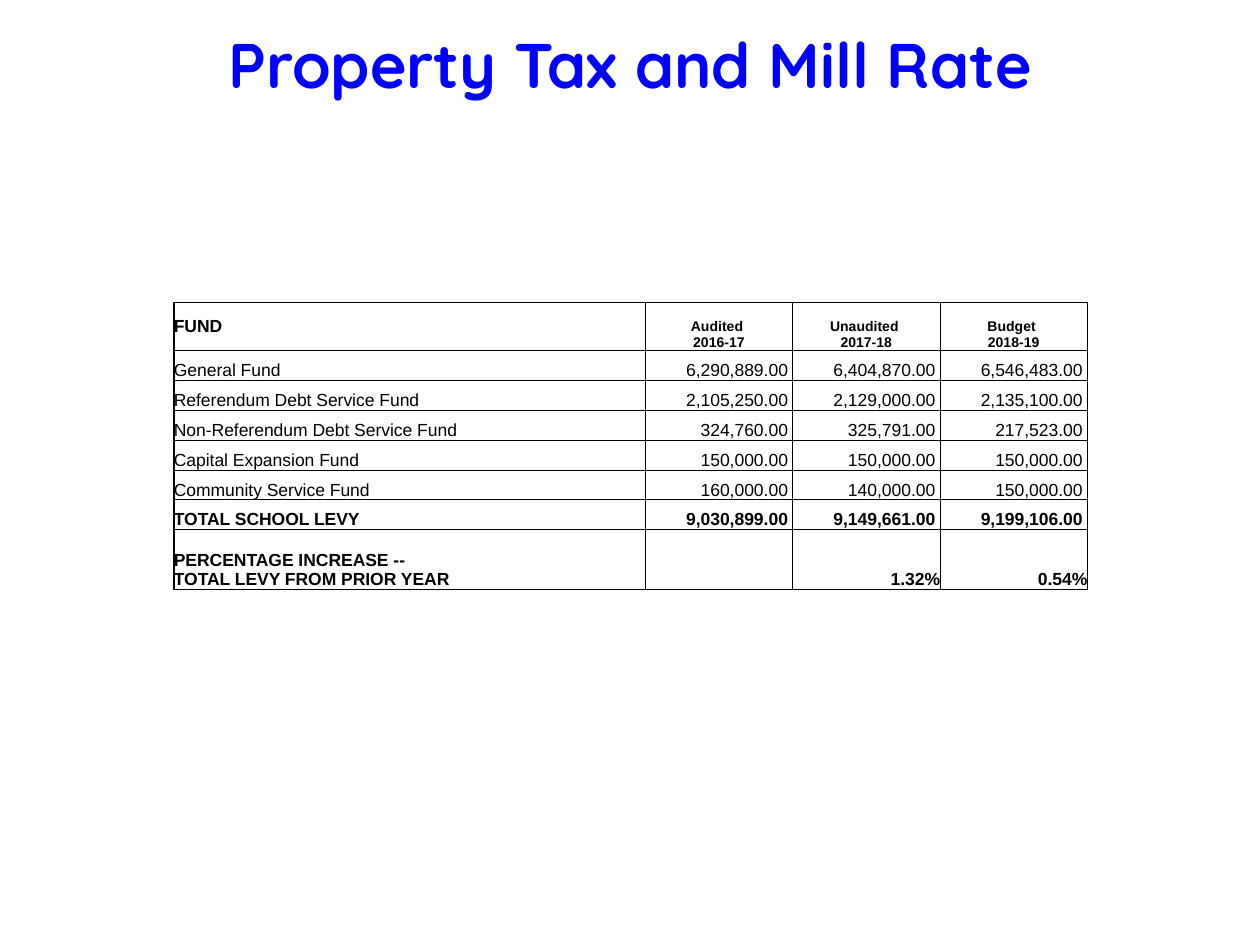
from copy import deepcopy

from lxml import etree
from pptx import Presentation, util as u
from pptx.dml.color import RGBColor
from pptx.enum import text as t
from pptx.oxml import ns

BLUE = RGBColor(0x00, 0x00, 0xFF)
BLACK = RGBColor(0x00, 0x00, 0x00)
SLIDE_WIDTH, SLIDE_HEIGHT = u.Inches(10), u.Inches(7.5)
TABLE_LEFT, TABLE_TOP = u.Inches(1.38), u.Inches(2.4)
TABLE_WIDTH, TABLE_HEIGHT = u.Inches(7.25), u.Inches(2.28)
COLUMN_SHARES = [3.2, 1, 1, 1]
ROW_SHARES = [1.6, 1, 1, 1, 1, 1, 1, 2]
OUTER, INNER = u.Pt(1), u.Pt(0.5)

TITLE = {"name": "Quicksand", "size": u.Pt(36), "bold": True}
BODY = {"name": "Arial", "size": u.Pt(10), "bold": False}
STRONG = {**BODY, "bold": True}
HEADING = {**STRONG, "size": u.Pt(8)}

HEADINGS = ["FUND", "Audited \n2016-17", "Unaudited \n2017-18", "Budget \n2018-19"]
LEVIES = [
    ("General Fund", 6290889, 6404870, 6546483),
    ("Referendum Debt Service Fund", 2105250, 2129000, 2135100),
    ("Non-Referendum Debt Service Fund", 324760, 325791, 217523),
    ("Capital Expansion Fund", 150000, 150000, 150000),
    ("Community Service Fund", 160000, 140000, 150000),
    ("TOTAL SCHOOL LEVY", 9030899, 9149661, 9199106),
]
INCREASES = ["PERCENTAGE INCREASE -- \nTOTAL LEVY FROM PRIOR YEAR", "", "1.32%", "0.54%"]


def write(frame, words, style, color, align):
    para = frame.paragraphs[0]
    para.text = words
    para.alignment = align
    for span in para.runs:
        for name, value in style.items():
            setattr(span.font, name, value)
        span.font.color.rgb = color
    for line_break in para._p.findall(ns.qn("a:br")):
        line_break.append(deepcopy(para.runs[0]._r.rPr))


def add_title(page, words):
    box = page.shapes.add_textbox(
        int(SLIDE_WIDTH * 0.05), u.Inches(0.19), int(SLIDE_WIDTH * 0.9), u.Inches(0.62))
    box.text_frame.word_wrap = True
    box.text_frame.vertical_anchor = t.MSO_ANCHOR.MIDDLE
    write(box.text_frame, words, TITLE, BLUE, t.PP_ALIGN.CENTER)


def set_borders(cell, widths):
    """Draw the four sides; widths follow the schema order L, R, T, B."""
    properties = cell._tc.get_or_add_tcPr()
    for side, width in zip("LRTB", widths):
        line = etree.SubElement(properties, ns.qn(f"a:ln{side}"), w=str(width))
        fill = etree.SubElement(line, ns.qn("a:solidFill"))
        etree.SubElement(fill, ns.qn("a:srgbClr"), val=str(BLACK))


def share_out(parts, attribute, total, shares):
    for part, share in zip(parts, shares):
        setattr(part, attribute, int(total * share / sum(shares)))


def cell_format(row, column, last_row):
    """Return text style, alignment and anchor for a place in the table."""
    if row == 0 and column > 0:
        return HEADING, t.PP_ALIGN.CENTER, t.MSO_ANCHOR.BOTTOM
    style = STRONG if row in (0, last_row - 1, last_row) else BODY
    align = t.PP_ALIGN.RIGHT if column else t.PP_ALIGN.LEFT
    anchor = t.MSO_ANCHOR.BOTTOM if row else t.MSO_ANCHOR.MIDDLE
    return style, align, anchor


def add_levy_table(page, rows):
    last_row, last_column = len(rows) - 1, len(rows[0]) - 1
    table = page.shapes.add_table(
        len(rows), len(rows[0]), TABLE_LEFT, TABLE_TOP, TABLE_WIDTH, TABLE_HEIGHT).table
    table.first_row = table.horz_banding = False
    share_out(table.columns, "width", TABLE_WIDTH, COLUMN_SHARES)
    share_out(table.rows, "height", TABLE_HEIGHT, ROW_SHARES)
    for r, row in enumerate(rows):
        for c, words in enumerate(row):
            cell = table.cell(r, c)
            style, align, anchor = cell_format(r, c, last_row)
            for side in ("left", "right", "top", "bottom"):
                setattr(cell, f"margin_{side}", 0)
            cell.vertical_anchor = anchor
            edges = (c == 0, c == last_column, r == 0, r == last_row)
            set_borders(cell, [OUTER if edge else INNER for edge in edges])
            cell.fill.background()
            write(cell.text_frame, words, style, BLACK, align)


def main():
    deck = Presentation()
    deck.slide_width, deck.slide_height = SLIDE_WIDTH, SLIDE_HEIGHT
    page = deck.slides.add_slide(deck.slide_layouts[6])
    add_title(page, "Property Tax and Mill Rate")
    levies = [[fund, *(f"{amount:,.2f} " for amount in amounts)] for fund, *amounts in LEVIES]
    add_levy_table(page, [HEADINGS, *levies, INCREASES])
    deck.save("out.pptx")


if __name__ == "__main__":
    main()
